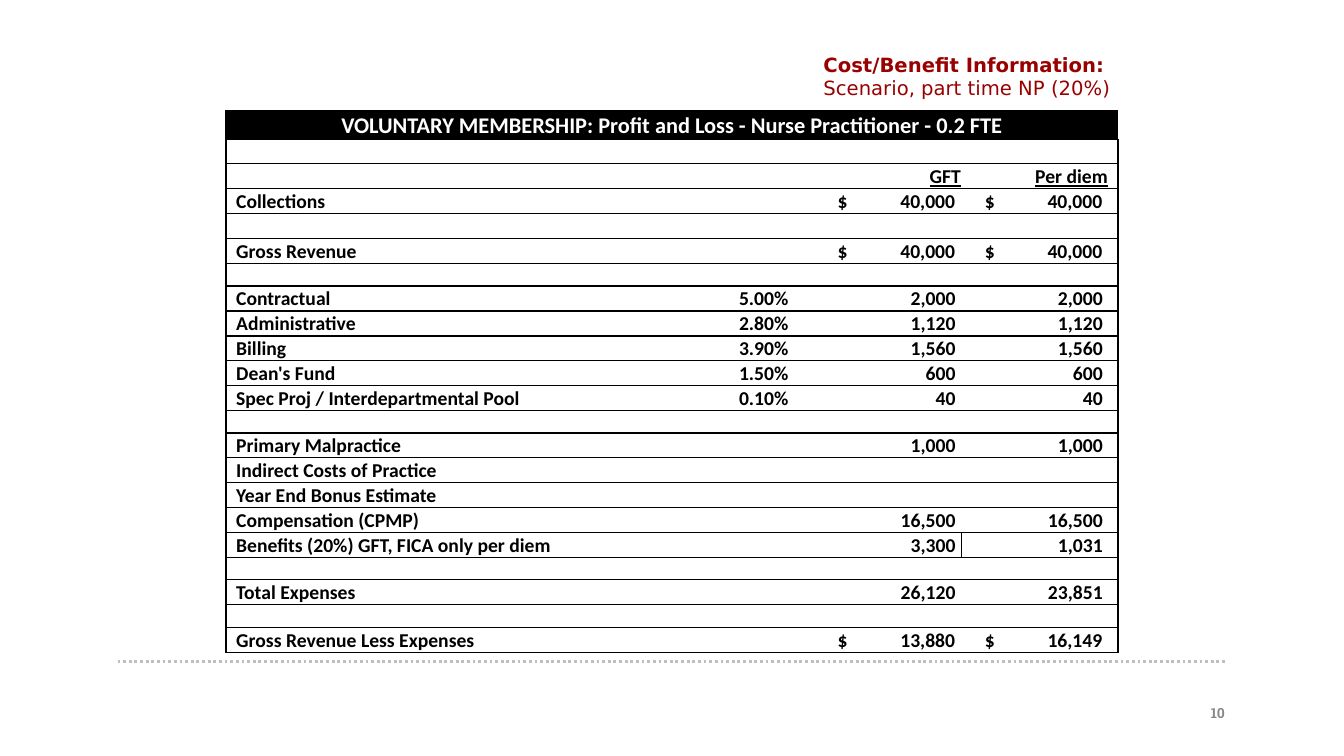
from lxml import etree
from pptx import Presentation
from pptx.dml.color import RGBColor
from pptx.enum import dml, shapes, text
from pptx.oxml.ns import qn
from pptx.util import Pt

BLACK = RGBColor(0, 0, 0)
WHITE = RGBColor(255, 255, 255)
RED = RGBColor(0x99, 0, 0)
GREY = RGBColor(0x88, 0x88, 0x88)
SILVER = RGBColor(0xBF, 0xBF, 0xBF)
LEFT, CENTER, RIGHT = text.PP_ALIGN.LEFT, text.PP_ALIGN.CENTER, text.PP_ALIGN.RIGHT

# A number is the height of an empty row; a tuple is label, rate, GFT, per diem.
FULL = 17.85
ROWS = [
    ("VOLUNTARY MEMBERSHIP: Profit and Loss - Nurse Practitioner - 0.2 FTE", "", "", ""),
    17.2,
    ("", "", "GFT", "Per diem"),
    ("Collections", "", "$\t40,000", "$\t40,000"),
    FULL,
    ("Gross Revenue", "", "$\t40,000", "$\t40,000"),
    16,
    ("Contractual", "5.00%", "2,000", "2,000"),
    ("Administrative", "2.80%", "1,120", "1,120"),
    ("Billing", "3.90%", "1,560", "1,560"),
    ("Dean's Fund", "1.50%", "600", "600"),
    ("Spec Proj / Interdepartmental Pool", "0.10%", "40", "40"),
    15.8,
    ("Primary Malpractice", "", "1,000", "1,000"),
    ("Indirect Costs of Practice", "", "", ""),
    ("Year End Bonus Estimate", "", "", ""),
    ("Compensation (CPMP)", "", "16,500", "16,500"),
    ("Benefits (20%) GFT, FICA only per diem", "", "3,300", "1,031"),
    15.8,
    ("Total Expenses", "", "26,120", "23,851"),
    16.2,
    ("Gross Revenue Less Expenses", "", "$\t13,880", "$\t16,149"),
]
HEAD, NAMES, BENEFITS = 0, 2, 17
WIDTHS = [260.6, 141.8, 11.5, 111.6, 111.6]


def set_font(para, name, size, color, bold=None):
    font = para.font
    font.name, font.size, font.bold = name, Pt(size), bold
    font.color.rgb = color


def add_edge(cell, side, shown):
    props = cell._tc.get_or_add_tcPr()
    edge = etree.SubElement(props, qn("a:ln" + side), w=str(Pt(1)))
    if shown:
        fill = etree.SubElement(edge, qn("a:solidFill"))
        etree.SubElement(fill, qn("a:srgbClr"), val=str(BLACK))
    else:
        etree.SubElement(edge, qn("a:noFill"))


prs = Presentation()
prs.slide_width, prs.slide_height = Pt(960), Pt(540)
slide = prs.slides.add_slide(prs.slide_layouts[5])

# Footer rule
rule = slide.shapes.add_connector(
    shapes.MSO_CONNECTOR.STRAIGHT, Pt(84), Pt(472.5), Pt(876), Pt(472.5))
rule.line.color.rgb = SILVER
rule.line.width = Pt(2)
rule.line.dash_style = dml.MSO_LINE.ROUND_DOT
etree.SubElement(rule._element.spPr, qn("a:effectLst"))

# Title
title = slide.shapes.title
title.left, title.top, title.width, title.height = Pt(581), Pt(34), Pt(255), Pt(36.5)
frame = title.text_frame
frame.word_wrap = True
frame.auto_size = text.MSO_AUTO_SIZE.NONE
frame.vertical_anchor = text.MSO_ANCHOR.TOP
para = frame.paragraphs[0]
para.alignment = LEFT
set_font(para, "DejaVu Sans", 14, RED)
lead = para.add_run()
lead.text = "Cost/Benefit Information:"
lead.font.bold = True
para.add_line_break()
scene = para.add_run()
scene.text = "Scenario, part time NP (20%)"
scene.font.bold = False

# Profit and loss table
table = slide.shapes.add_table(
    len(ROWS), len(WIDTHS), Pt(161.5), Pt(79.3), Pt(sum(WIDTHS)), Pt(386.8)).table
table.first_row = table.horz_banding = False
for col, width in zip(table.columns, WIDTHS):
    col.width = Pt(width)

for r, row in enumerate(ROWS):
    blank = not isinstance(row, tuple)
    height = row if blank else 20.5 if r == HEAD else FULL
    table.rows[r].height = Pt(height)
    label, rate, gft, diem = ("",) * 4 if blank else row
    for c, words in enumerate((label, rate, "", gft, diem)):
        cell = table.cell(r, c)
        add_edge(cell, "L", c == 0 or (r == BENEFITS and c == 4))
        add_edge(cell, "R", c == 4 or (r == BENEFITS and c == 3))
        add_edge(cell, "T", True)
        add_edge(cell, "B", True)
        cell.fill.solid()
        cell.fill.fore_color.rgb = BLACK if r == HEAD else WHITE
        cell.vertical_anchor = text.MSO_ANCHOR.BOTTOM
        cell.margin_top, cell.margin_bottom = Pt(0.7), Pt(0)
        cell.margin_left = Pt(7.2 if c == 0 and r != HEAD else 0.7)
        cell.margin_right = Pt(7.2 if c == 4 else 0.7)
        para = cell.text_frame.paragraphs[0]
        if not words:
            etree.SubElement(para._p, qn("a:endParaRPr"), sz="1000")
            continue
        para.text = words
        para.alignment = CENTER if r == HEAD else LEFT if c == 0 else RIGHT
        if "\t" in words:
            para.alignment = LEFT
            cell.margin_left = Pt(23 if c == 3 else 16.5)
            tabs = etree.SubElement(para._p.get_or_add_pPr(), qn("a:tabLst"))
            etree.SubElement(tabs, qn("a:tab"), pos=str(Pt(84)), algn="r")
        elif c > 2 and r != NAMES:
            cell.margin_right = Pt(4.4 if c == 3 else 10.8)
        if r == HEAD:
            set_font(para, "Calibri", 16, WHITE, True)
        else:
            set_font(para, "Calibri", 14, BLACK, True)
        if r == NAMES:
            para.font.underline = True

table.cell(HEAD, 0).merge(table.cell(HEAD, 4))
table.cell(BENEFITS, 0).merge(table.cell(BENEFITS, 1))

# Page number
page = slide.shapes.add_textbox(Pt(836), Pt(499.7), Pt(46), Pt(23.8))
page.text_frame.word_wrap = True
para = page.text_frame.paragraphs[0]
para.text = "10"
para.alignment = RIGHT
set_font(para, "Roboto Slab", 10, GREY, True)

prs.save("out.pptx")
